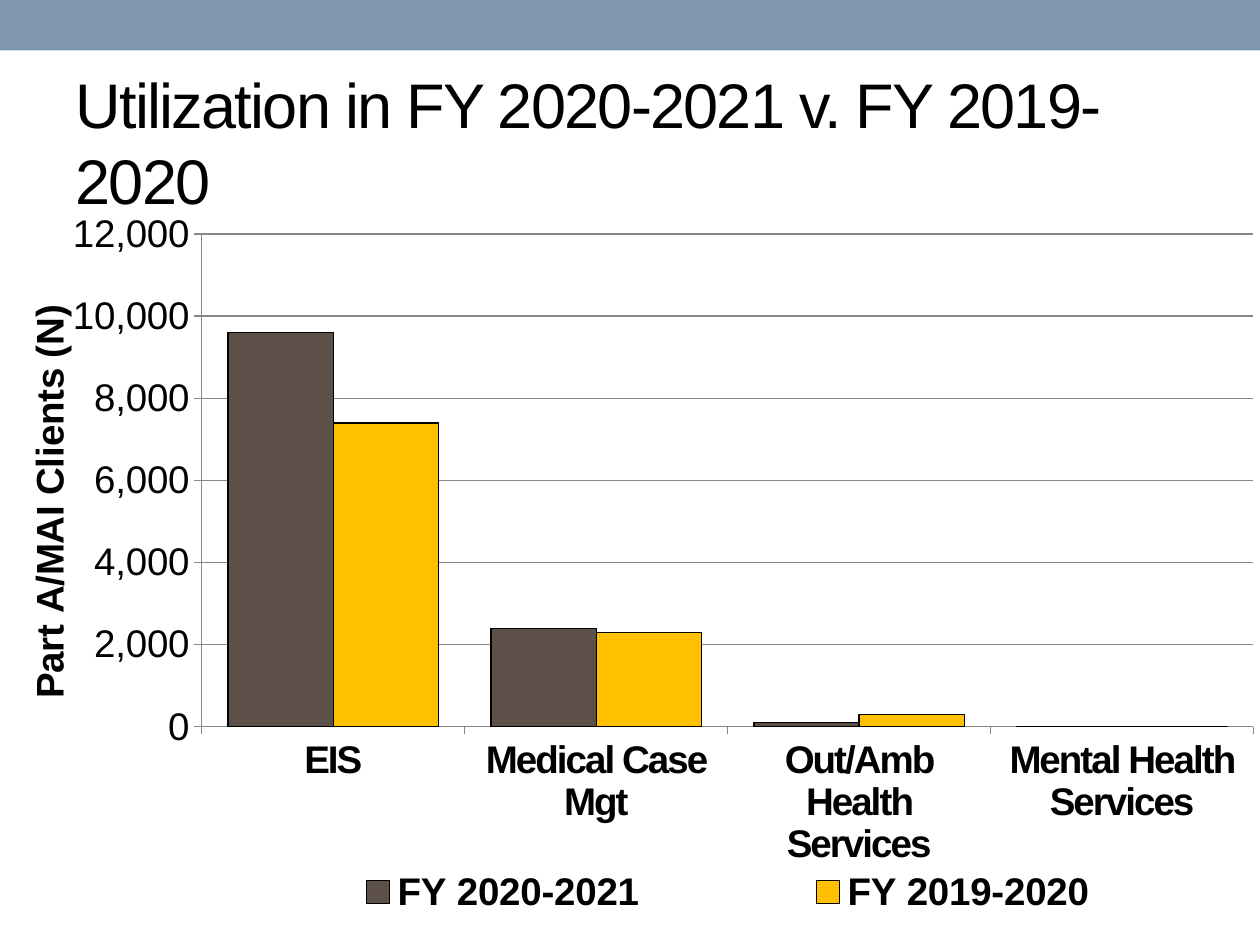
import pptx
import pptx.chart.data
import pptx.dml.color
import pptx.enum.chart
import pptx.enum.shapes
import pptx.enum.text
import pptx.oxml
import pptx.util
from pptx.util import Inches

COLORS = {"band": "7E97AD", "text": "000000", "brown": "5C5048",
          "gold": "FFC000", "axis": "878787"}
FONT = "Arial"
CHART_NS = "http://schemas.openxmlformats.org/drawingml/2006/chart"


def style_font(font, size, bold=False):
    font.name = FONT
    font.size = pptx.util.Pt(size)
    font.bold = bold
    font.color.rgb = pptx.dml.color.RGBColor.from_string(COLORS["text"])


def set_layout(parent, index, target="", **fractions):
    """Fix the place of a chart part, in fractions of the chart."""
    for old in parent.xpath("c:layout"):
        parent.remove(old)
    modes = "".join(f'<c:{m}Mode val="edge"/>' for m in "xy")
    sizes = "".join(f'<c:{k} val="{v}"/>' for k, v in fractions.items())
    parent.insert(index, pptx.oxml.parse_xml(
        f'<c:layout xmlns:c="{CHART_NS}"><c:manualLayout>'
        f'{target}{modes}{sizes}</c:manualLayout></c:layout>'))


rgb = {k: pptx.dml.color.RGBColor.from_string(v) for k, v in COLORS.items()}

prs = pptx.Presentation()
prs.slide_width, prs.slide_height = Inches(10), Inches(7.5)
s = prs.slides.add_slide(prs.slide_layouts[5])

# Top band
sp = s.shapes.add_shape(pptx.enum.shapes.MSO_SHAPE.RECTANGLE,
                        0, 0, Inches(10), Inches(0.4))
sp.shadow.inherit = False
sp.fill.solid()
sp.fill.fore_color.rgb = rgb["band"]
sp.line.fill.background()

# Title
title = s.shapes.title
title.left, title.top = Inches(0.5), Inches(0.58)
title.width, title.height = Inches(9), Inches(1.08)
tf = title.text_frame
tf.word_wrap = True
tf.auto_size = pptx.enum.text.MSO_AUTO_SIZE.NONE
tf.vertical_anchor = pptx.enum.text.MSO_ANCHOR.MIDDLE
p = tf.paragraphs[0]
p.alignment = pptx.enum.text.PP_ALIGN.LEFT
r = p.add_run()
r.text = "Utilization in FY 2020-2021 v. FY 2019-2020"
style_font(r.font, 36)
r.font._element.set("spc", "-100")

# Chart
data = pptx.chart.data.CategoryChartData(number_format="#,##0")
data.categories = ["EIS", "Medical Case Mgt", "Out/Amb Health Services",
                   "Mental Health Services"]
data.add_series("FY 2020-2021", [9600, 2400, 100, 0])
data.add_series("FY 2019-2020", [7400, 2300, 300, 0])
chart = s.shapes.add_chart(
    pptx.enum.chart.XL_CHART_TYPE.COLUMN_CLUSTERED,
    Inches(-0.06), Inches(1.67), Inches(10.13), Inches(5.67), data).chart
style_font(chart.font, 22)
chart.has_title = False

plot = chart.plots[0]
plot.gap_width, plot.overlap = 50, 0
plot.vary_by_categories = False
for series, color in zip(plot.series, ["brown", "gold"]):
    series.format.fill.solid()
    series.format.fill.fore_color.rgb = rgb[color]
    series.format.line.color.rgb = rgb["text"]
    series.format.line.width = pptx.util.Pt(0.75)

cat, val = chart.category_axis, chart.value_axis
style_font(cat.tick_labels.font, 22, bold=True)
cat.tick_labels.font._element.set("spc", "-100")
style_font(val.tick_labels.font, 22)
val.tick_labels.number_format = "#,##0"
val.tick_labels.number_format_is_linked = False
val.minimum_scale, val.maximum_scale, val.major_unit = 0, 12000, 2000
val.has_major_gridlines = True
for part in (cat, val, val.major_gridlines):
    part.format.line.color.rgb = rgb["axis"]
    part.format.line.width = pptx.util.Pt(0.75)
for axis in (cat, val):
    axis.major_tick_mark = pptx.enum.chart.XL_TICK_MARK.OUTSIDE

r = val.axis_title.text_frame.paragraphs[0].add_run()
r.text = "Part A/MAI Clients (N)"
style_font(r.font, 22, bold=True)

chart.has_legend = True
chart.legend.position = pptx.enum.chart.XL_LEGEND_POSITION.BOTTOM
chart.legend.include_in_layout = False
style_font(chart.legend.font, 22, bold=True)

# The legend spans the width of the plot
set_layout(chart._chartSpace.chart.plotArea, 0,
           '<c:layoutTarget val="inner"/>', x=0.164, y=0.033, w=0.824, h=0.69)
set_layout(val.axis_title._element, 1, x=0.02, y=0.123)
set_layout(chart.legend._element, 1, x=0.164, y=0.914, w=0.824, h=0.08)

prs.save("out.pptx")
